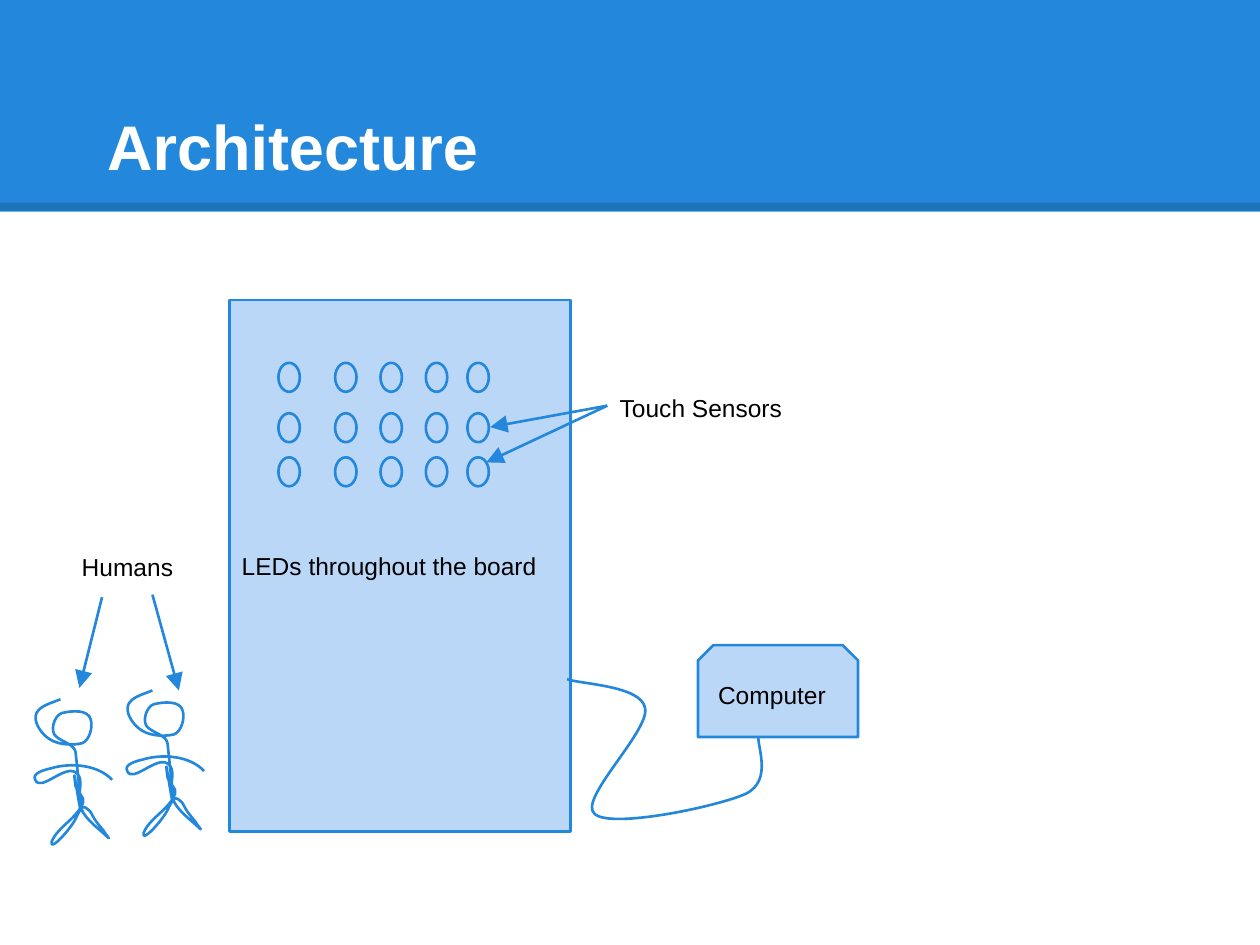
from dataclasses import dataclass
from itertools import product
from typing import NamedTuple

from lxml.etree import SubElement
from pptx import Presentation
from pptx.dml.color import RGBColor
from pptx.enum.shapes import MSO_CONNECTOR, MSO_SHAPE
from pptx.enum.text import MSO_ANCHOR, MSO_AUTO_SIZE, PP_ALIGN
from pptx.oxml.ns import qn
from pptx.util import Inches, Pt


@dataclass(frozen=True)
class Theme:
    blue: RGBColor = RGBColor(0x23, 0x88, 0xDB)
    pale: RGBColor = RGBColor(0xBB, 0xD7, 0xF8)
    black: RGBColor = RGBColor(0, 0, 0)
    white: RGBColor = RGBColor(255, 255, 255)
    font: str = "Arial"
    title: float = 36
    label: float = 14
    line: float = 1.5
    rule: float = 4.5


class Box(NamedTuple):
    """Left, top, width and height in grid cells."""
    x: float
    y: float
    w: float
    h: float


class Point(NamedTuple):
    x: float
    y: float


class Curve(NamedTuple):
    """A start, then one (control, control, end) row of coordinates per piece."""
    start: Point
    pieces: list


THEME = Theme()
COLS, ROWS = 100, 75
CELL = Inches(10) // COLS

# Touch sensors: left edges of the columns, top edges of the rows
SENSOR_COLS = (22.1, 26.6, 30.2, 33.8, 37.1)
SENSOR_ROWS = (28.8, 32.8, 36.3)

CABLE = Curve(Point(45, 53.9), [
    (46, 54.3, 50.9, 54.4, 51.2, 56.2), (51.6, 58, 45.8, 63.5, 47.2, 64.6),
    (48.5, 65.8, 57, 64, 59.2, 63), (61.4, 61.9, 60, 59.1, 60.2, 58.3)])

# One stick figure, measured from the corner of its box
FIGURE = Curve(Point(2.1, 0), [
    (1.4, 0.3, 0.5, 0.5, 0.2, 1.1), (-0.1, 1.7, 0.5, 2.6, 1, 3),
    (1.7, 3.6, 2.9, 3.7, 3.8, 3.5), (4.4, 3.3, 4.7, 2.2, 4.5, 1.6),
    (4.3, 0.8, 3, 0.9, 2.2, 1.1), (1.6, 1.3, 1.2, 2.6, 1.8, 3),
    (2.3, 3.4, 3.2, 3.6, 3.3, 4.2), (4.5, 15.2, 2.8, 2.8, 3.3, 6.9),
    (3.4, 7.4, 4.1, 7.8, 3.9, 8.2), (3.4, 9.5, 1.9, 10.1, 1.4, 11.3),
    (1.2, 12.2, 2.9, 10.3, 3.3, 9.5), (3.5, 9.1, 3.8, 8.3, 4.1, 8.6),
    (4.9, 9.2, 4.2, 8.9, 5.5, 10.4), (5.6, 10.6, 6.1, 11.2, 5.9, 11),
    (5.1, 10.2, 3.8, 9.4, 3.6, 8.2), (3.5, 7.4, 4, 6.2, 3.3, 5.8),
    (2.4, 5.2, 0.5, 7.4, 0.1, 6.4), (-0.2, 5.9, 0.8, 5.6, 1.3, 5.5),
    (2.9, 5, 5.1, 5.2, 6.2, 6.4)])


def emu(cells: float) -> int:
    return round(cells * CELL)


def write(shape, text: str, size: float, color: RGBColor, anchor, bold: bool = False) -> None:
    tf = shape.text_frame
    tf.text = text
    tf.word_wrap = True
    tf.auto_size = MSO_AUTO_SIZE.NONE
    tf.vertical_anchor = anchor
    tf.margin_left = tf.margin_right = tf.margin_top = tf.margin_bottom = Inches(0.1)
    p = tf.paragraphs[0]
    p.alignment = PP_ALIGN.LEFT
    font = p.runs[0].font
    font.name, font.size, font.bold = THEME.font, Pt(size), bold
    font.color.rgb = color


def outline(shape) -> None:
    shape.line.color.rgb = THEME.blue
    shape.line.width = Pt(THEME.line)


def add_block(s, kind, box: Box, text: str = "", fill: RGBColor = THEME.pale):
    sp = s.shapes.add_shape(kind, *map(emu, box))
    sp.shadow.inherit = False
    sp.fill.solid()
    sp.fill.fore_color.rgb = fill
    outline(sp)
    if text:
        write(sp, text, THEME.label, THEME.black, MSO_ANCHOR.MIDDLE)
    return sp


def add_label(s, box: Box, text: str) -> None:
    tb = s.shapes.add_textbox(*map(emu, box))
    write(tb, text, THEME.label, THEME.black, MSO_ANCHOR.TOP)


def add_line(s, start: Point, end: Point):
    line = s.shapes.add_connector(MSO_CONNECTOR.STRAIGHT, *map(emu, (*start, *end)))
    outline(line)
    SubElement(line._element.spPr, qn("a:effectLst"))
    return line


def add_arrow(s, start: Point, end: Point) -> None:
    ln = add_line(s, start, end).line._get_or_add_ln()
    SubElement(ln, qn("a:tailEnd"), type="triangle", w="lg", len="lg")


def add_curve(s, curve: Curve, corner: Point = Point(0, 0)) -> None:
    def place(x: float, y: float) -> tuple[int, int]:
        return emu(corner.x + x), emu(corner.y + y)

    builder = s.shapes.build_freeform(*place(*curve.start))
    builder.add_line_segments([place(*piece[4:]) for piece in curve.pieces], close=False)
    sp = builder.convert_to_shape()
    sp.shadow.inherit = False
    sp.fill.background()
    outline(sp)
    # Bend each straight segment with its two control points
    for segment, piece in zip(list(sp._element.iter(qn("a:lnTo"))), curve.pieces):
        segment.getparent().replace(segment, bend := segment.makeelement(qn("a:cubicBezTo")))
        for i in (0, 2, 4):
            x, y = place(*piece[i:i + 2])
            SubElement(bend, qn("a:pt"), x=str(x - sp.left), y=str(y - sp.top))


def add_header(s, text: str) -> None:
    banner = add_block(s, MSO_SHAPE.RECTANGLE, Box(0, 0, COLS, 16.8), fill=THEME.blue)
    banner.line.fill.background()
    rule = add_line(s, Point(0, 16.4), Point(COLS, 16.4))
    rule.line.color.rgb = THEME.black
    rule.line.width = Pt(THEME.rule)
    color = next(rule._element.spPr.iter(qn("a:srgbClr")))
    SubElement(color, qn("a:alpha"), val="15000")
    # The title sits in front of the banner
    title = s.shapes.title
    s.shapes._spTree.append(title._element)
    title.left, title.top, title.width, title.height = map(emu, Box(5, 3, 90, 12.5))
    write(title, text, THEME.title, THEME.white, MSO_ANCHOR.BOTTOM, bold=True)
    pPr = title.text_frame.paragraphs[0]._p.get_or_add_pPr()
    pPr.set("marL", "0")
    pPr.set("indent", str(Inches(0.25)))


def main() -> None:
    prs = Presentation()
    prs.slide_width, prs.slide_height = COLS * CELL, ROWS * CELL
    s = prs.slides.add_slide(prs.slide_layouts[5])
    add_header(s, "Architecture")

    # Board with its sensors
    add_block(s, MSO_SHAPE.RECTANGLE, Box(18.2, 23.8, 27.1, 42.2), "LEDs throughout the board")
    for y, x in product(SENSOR_ROWS, SENSOR_COLS):
        add_block(s, MSO_SHAPE.OVAL, Box(x, y, 1.7, 2.3))
    add_label(s, Box(48.2, 30.2, 17, 4.2), "Touch Sensors")
    for target in (Point(38.9, 33.9), Point(38.6, 36.7)):
        add_arrow(s, Point(48.2, 32.2), target)

    # Computer on its cable
    add_curve(s, CABLE)
    computer = add_block(s, MSO_SHAPE.SNIP_2_SAME_RECTANGLE, Box(55.4, 51.2, 12.7, 7.3), "Computer")
    computer.adjustments[0] = 0.167

    # Humans
    add_label(s, Box(5.5, 42.8, 10.1, 4.2), "Humans")
    for corner, start, end in (
            (Point(10, 54.8), Point(12.1, 47.2), Point(14.2, 54.8)),
            (Point(2.7, 55.5), Point(8.1, 47.4), Point(6.3, 54.6))):
        add_curve(s, FIGURE, corner)
        add_arrow(s, start, end)

    prs.save("out.pptx")


if __name__ == "__main__":
    main()
